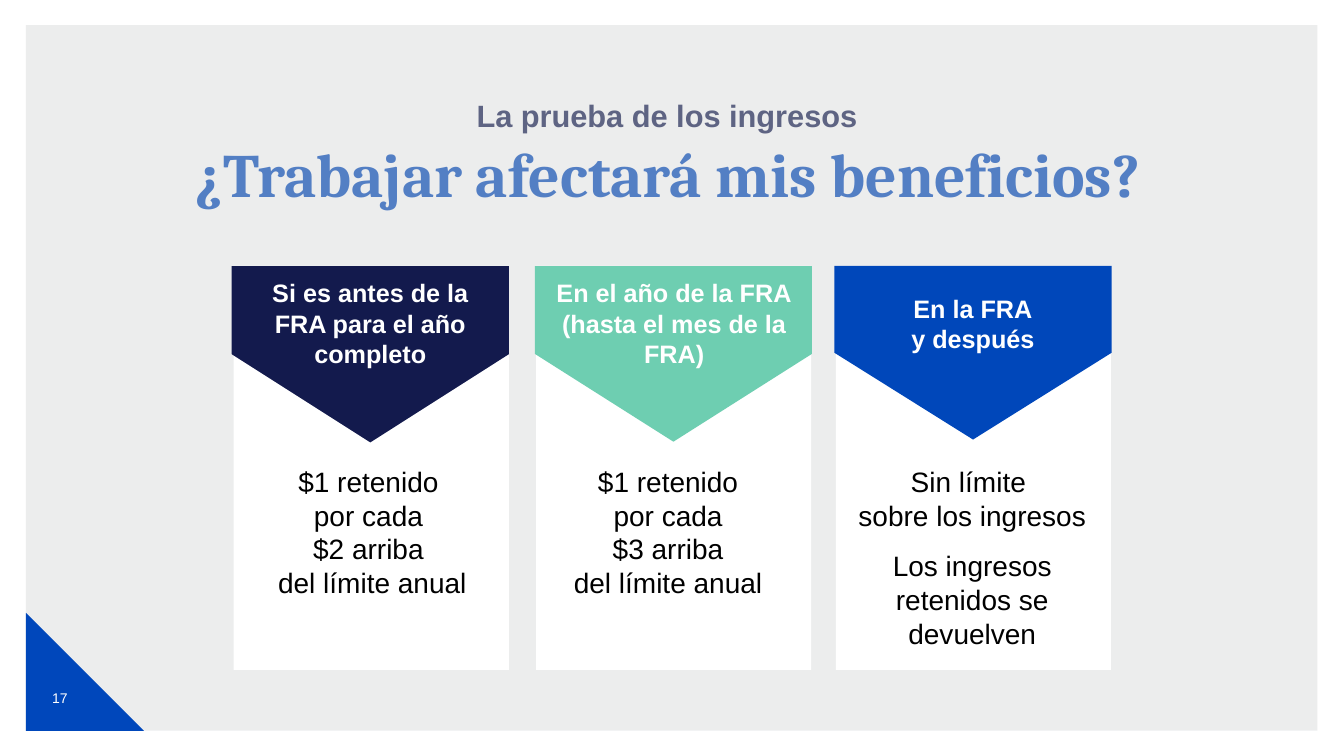
import pptx
import pptx.util
import pptx.dml.color
import pptx.enum.shapes
import pptx.enum.text
import lxml.etree

Pt = pptx.util.Pt
SHAPES = pptx.enum.shapes.MSO_SHAPE
ANCHOR = pptx.enum.text.MSO_ANCHOR
COLORS = {"gray": "D0D3D4", "blue": "0047BB", "bright": "0047BA", "navy": "131A4D",
          "mint": "6ECEB1", "white": "FFFFFF", "black": "000000"}

presentation = pptx.Presentation()
presentation.slide_width = Pt(960)
presentation.slide_height = Pt(540)
slide = presentation.slides.add_slide(presentation.slide_layouts[1])


def add_block(kind, left, top, width, height, color):
    shape = slide.shapes.add_shape(kind, Pt(left), Pt(top), Pt(width), Pt(height))
    shape.shadow.inherit = False
    shape.fill.solid()
    shape.fill.fore_color.rgb = pptx.dml.color.RGBColor.from_string(COLORS[color])
    shape.line.fill.background()
    return shape


def write(box, place, paragraphs, size, color, bold=False, font="Arial",
          anchor=ANCHOR.TOP, insets=(7.2, 3.6), spacing=1.0, after=0):
    box.left, box.top, box.width, box.height = [Pt(length) for length in place]
    frame = box.text_frame
    frame.word_wrap = True
    frame.auto_size = pptx.enum.text.MSO_AUTO_SIZE.NONE
    frame.vertical_anchor = anchor
    frame.margin_left = frame.margin_right = Pt(insets[0])
    frame.margin_top = frame.margin_bottom = Pt(insets[1])
    for number, text in enumerate(paragraphs):
        paragraph = frame.add_paragraph() if number else frame.paragraphs[0]
        properties = paragraph._p.get_or_add_pPr()
        properties.set("marL", "0")
        properties.set("indent", "0")
        lxml.etree.SubElement(properties, pptx.oxml.ns.qn("a:buNone"))
        paragraph.alignment = pptx.enum.text.PP_ALIGN.CENTER
        paragraph.line_spacing = spacing
        paragraph.space_before = Pt(0)
        paragraph.space_after = Pt(after)
        for row, line in enumerate(text.split("\n")):
            if row:
                paragraph.add_line_break()
            run = paragraph.add_run()
            run.text = line
            run.font.size = Pt(size)
            run.font.name = font
            run.font.bold = bold
            run.font.color.rgb = pptx.dml.color.RGBColor.from_string(COLORS[color])


# Backdrop, corner and slide number
backdrop = add_block(SHAPES.RECTANGLE, 18.5, 18, 922.5, 504, "gray")
backdrop_color = backdrop.fill._xPr.find(".//" + pptx.oxml.ns.qn("a:srgbClr"))
lxml.etree.SubElement(backdrop_color, pptx.oxml.ns.qn("a:alpha")).set("val", "40000")
add_block(SHAPES.RIGHT_TRIANGLE, 18.5, 437.75, 84.25, 84.25, "blue")
write(slide.shapes.add_textbox(0, 0, 0, 0), (23, 477.5, 39.5, 41.5), ["17"],
      10, "white", anchor=ANCHOR.MIDDLE)

# Headings
write(slide.placeholders[1], (117.5, 68.5, 724, 36), ["La prueba de los ingresos "],
      22, "navy", bold=True, insets=(0, 3.6), spacing=0.9)
write(slide.shapes.title, (85.5, 103, 783.5, 47), ["¿Trabajar afectará mis beneficios?"],
      44, "bright", bold=True, font="Cambria", anchor=ANCHOR.MIDDLE,
      insets=(0, 3.6), spacing=0.9)

# Cards: left, banner centre, banner depth, colour,
# heading left and width, heading, body left, body
cards = [
    (167, 264.5, 126, "navy", 167, 195, ["Si es antes de la FRA para el año completo"],
     167, ["$1 retenido \npor cada \n$2 arriba \ndel límite anual"]),
    (383, 481, 125.5, "mint", 382.5, 198, ["En el año de la FRA", "(hasta el mes de la FRA)"],
     381, ["$1 retenido \npor cada \n$3 arriba \ndel límite anual "]),
    (597, 695, 124, "bright", 605, 180, ["En la FRA\ny después"],
     595.5, ["Sin límite \nsobre los ingresos", "Los ingresos retenidos se devuelven"]),
]
CARD_TOP, CARD_WIDTH, BANNER_WIDTH = 190, 196.5, 198
for (left, center, depth, color, heading_left, heading_width, heading,
     body_left, body) in cards:
    add_block(SHAPES.RECTANGLE, left, CARD_TOP, CARD_WIDTH, 288.5, "white")
    banner = add_block(SHAPES.PENTAGON, center - depth / 2,
                       CARD_TOP + (depth - BANNER_WIDTH) / 2, depth, BANNER_WIDTH, color)
    banner.rotation = 90
    write(slide.shapes.add_textbox(0, 0, 0, 0), (heading_left, 211, heading_width, 39.5),
          heading, 18, "white", bold=True, anchor=ANCHOR.MIDDLE)
    several = len(body) > 1
    inset = 7.2 if several else 0
    write(slide.shapes.add_textbox(0, 0, 0, 0), (body_left, 332 - inset, BANNER_WIDTH, 147),
          body, 20, "black", insets=(inset, inset), after=12 if several else 0)

presentation.save("out.pptx")
